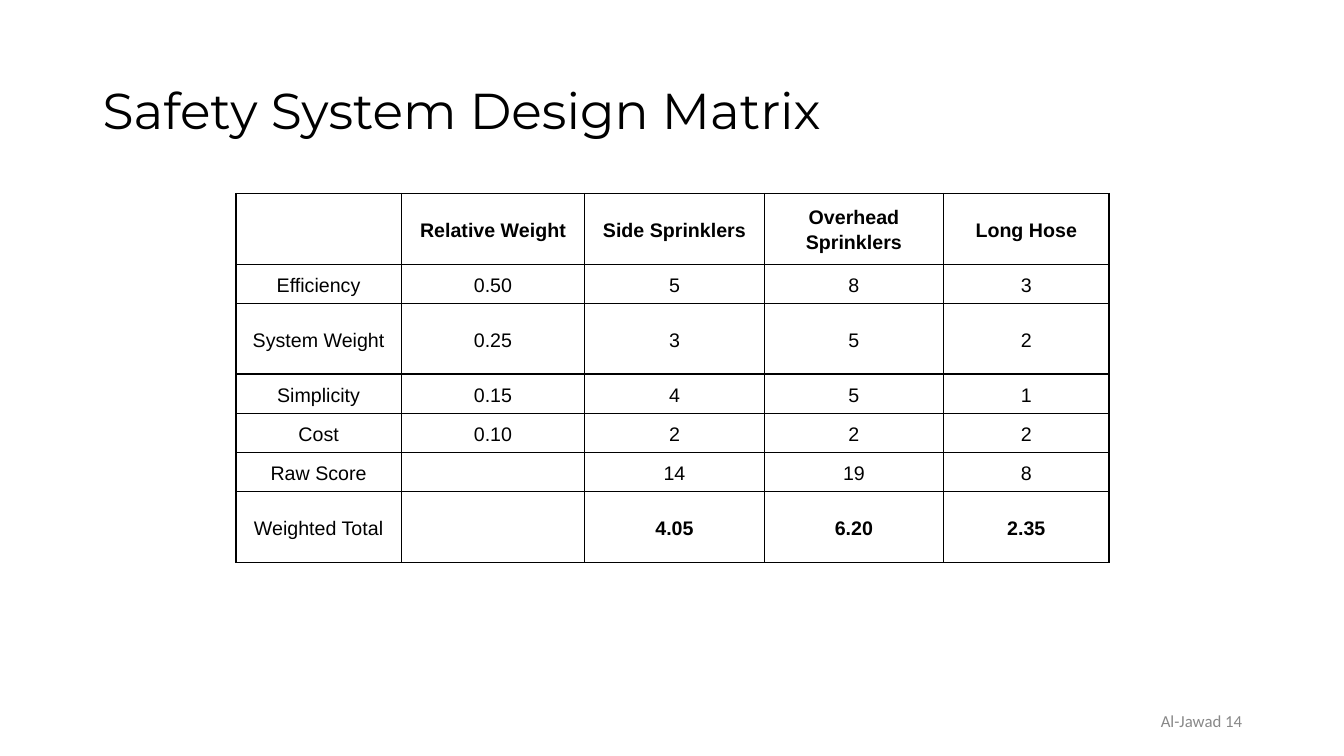
from dataclasses import dataclass

from lxml import etree
from pptx import Presentation
from pptx.dml.color import RGBColor
from pptx.enum.text import MSO_ANCHOR, PP_ALIGN
from pptx.oxml.ns import qn
from pptx.util import Inches, Pt

MIDDLE = MSO_ANCHOR.MIDDLE
LEFT, CENTER, RIGHT = PP_ALIGN.LEFT, PP_ALIGN.CENTER, PP_ALIGN.RIGHT
MARGINS = ("margin_left", "margin_top", "margin_right", "margin_bottom")


@dataclass(frozen=True)
class Theme:
    ink: str = "000000"
    muted: str = "888888"
    paper: str = "FFFFFF"
    title_font: str = "Montserrat"
    table_font: str = "Arial"
    footer_font: str = "Calibri"
    title_size: int = 36
    table_size: int = 14
    footer_size: int = 12
    border_width: int = 1


THEME = Theme()

COLUMN_WIDTHS = (1.64, 1.82, 1.78, 1.78, 1.64)
SHORT, TALL = 0.39, 0.7
ROW_HEIGHTS = (TALL, SHORT, TALL, SHORT, SHORT, SHORT, TALL)
MATRIX = (
    ("", "Relative Weight", "Side Sprinklers", "Overhead Sprinklers", "Long Hose"),
    ("Efficiency", "0.50", "5", "8", "3"),
    ("System Weight", "0.25", "3", "5", "2"),
    ("Simplicity", "0.15", "4", "5", "1"),
    ("Cost", "0.10", "2", "2", "2"),
    ("Raw Score", "", "14", "19", "8"),
    ("Weighted Total", "", "4.05", "6.20", "2.35"),
)


def set_values(target, values):
    for name, value in values.items():
        setattr(target, name, value)


class PageBuilder:
    def __init__(self, page, theme):
        self.page = page
        self.theme = theme

    def add_span(self, para, text, font, size, color, align, spacing=1.0, bold=False):
        set_values(para, {"alignment": align, "line_spacing": spacing})
        span = para.add_run()
        span.text = text
        set_values(span.font, {"name": font, "size": Pt(size), "bold": bold})
        span.font.color.rgb = RGBColor.from_string(color)

    def add_text(self, place, text, **style):
        box = self.page.shapes.add_textbox(*map(Inches, place))
        frame = box.text_frame
        set_values(frame, {"word_wrap": True, "vertical_anchor": MIDDLE})
        set_values(frame, dict.fromkeys(MARGINS, Inches(0.1)))
        self.add_span(frame.paragraphs[0], text, **style)

    def add_borders(self, cell):
        properties = cell._tc.get_or_add_tcPr()
        for position, side in enumerate(("lnL", "lnR", "lnT", "lnB")):
            line = etree.Element(qn(f"a:{side}"), w=str(Pt(self.theme.border_width)))
            fill = etree.SubElement(line, qn("a:solidFill"))
            etree.SubElement(fill, qn("a:srgbClr"), val=self.theme.ink)
            properties.insert(position, line)

    def fill_cell(self, cell, text, bold):
        set_values(cell, dict(zip(MARGINS, map(Inches, (0.07, 0, 0.07, 0)))))
        cell.vertical_anchor = MIDDLE
        cell.fill.solid()
        cell.fill.fore_color.rgb = RGBColor.from_string(self.theme.paper)
        self.add_borders(cell)
        if text:
            self.add_span(cell.text_frame.paragraphs[0], text, self.theme.table_font,
                          self.theme.table_size, self.theme.ink, CENTER, 1.15, bold)

    def add_matrix(self, left, top, rows, widths, heights):
        place = map(Inches, (left, top, sum(widths), sum(heights)))
        table = self.page.shapes.add_table(len(rows), len(widths), *place).table
        set_values(table, {"first_row": False, "horz_banding": False})
        for column, width in zip(table.columns, widths):
            column.width = Inches(width)
        for row, height in zip(table.rows, heights):
            row.height = Inches(height)
        last = len(rows) - 1
        for r, values in enumerate(rows):
            for c, value in enumerate(values):
                # Headings and the weighted totals stand out
                self.fill_cell(table.cell(r, c), value, r == 0 or (r == last and c > 0))


def main():
    deck = Presentation()
    set_values(deck, {"slide_width": Inches(13.33), "slide_height": Inches(7.5)})
    builder = PageBuilder(deck.slides.add_slide(deck.slide_layouts[6]), THEME)

    # Title
    builder.add_text((0.92, 0.4, 11.5, 1.45), "Safety System Design Matrix",
                     font=THEME.title_font, size=THEME.title_size, color=THEME.ink,
                     align=LEFT, spacing=0.9)

    # Decision matrix
    builder.add_matrix(2.34, 1.92, MATRIX, COLUMN_WIDTHS, ROW_HEIGHTS)

    # Footer
    builder.add_text((9.42, 6.95, 3, 0.4), "Al-Jawad 14", font=THEME.footer_font,
                     size=THEME.footer_size, color=THEME.muted, align=RIGHT)

    deck.save("out.pptx")


if __name__ == "__main__":
    main()
